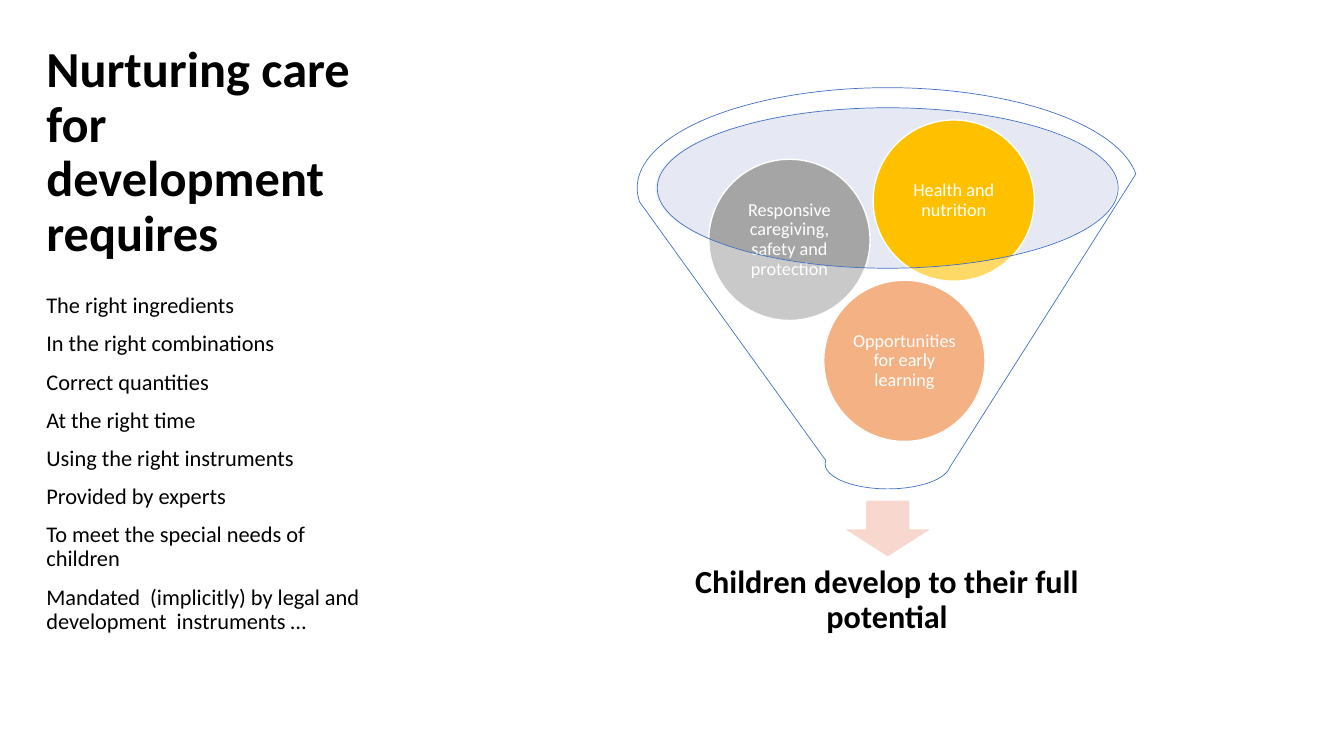
import pptx
import pptx.dml.color
import pptx.enum.shapes
import pptx.enum.text
import pptx.oxml
import pptx.oxml.ns
import pptx.util
from dataclasses import dataclass

Inches = pptx.util.Inches
Pt = pptx.util.Pt
SHAPE = pptx.enum.shapes.MSO_SHAPE
ALIGN = pptx.enum.text.PP_ALIGN
ANCHOR = pptx.enum.text.MSO_ANCHOR


@dataclass(frozen=True)
class Theme:
    font: str = "Calibri"
    title_size: int = 36
    outcome_size: int = 23
    body_size: int = 16
    ingredient_size: int = 13
    text: str = "000000"
    light: str = "FFFFFF"
    funnel_line: str = "4472C4"
    funnel_mouth: str = "C1C9E4"
    arrow: str = "F8D7CE"
    learning: str = "ED7D31"
    caregiving: str = "A5A5A5"
    health: str = "FFC000"


def rgb(value):
    return pptx.dml.color.RGBColor.from_string(value)


def write_text(frame, paragraphs, *, font, size, color, bold=False, align=ALIGN.LEFT,
               anchor=ANCHOR.TOP, inset=None, space_before=0):
    frame.word_wrap = True
    frame.auto_size = pptx.enum.text.MSO_AUTO_SIZE.NONE
    frame.vertical_anchor = anchor
    if inset is not None:
        frame.margin_left = frame.margin_right = Inches(inset)
        frame.margin_top = frame.margin_bottom = Inches(inset)
    frame.text = "\n".join(paragraphs)
    for paragraph in frame.paragraphs:
        paragraph.alignment = align
        paragraph.line_spacing = 0.9
        paragraph.space_before = Pt(space_before)
        paragraph.font.name = font
        paragraph.font.size = Pt(size)
        paragraph.font.bold = bold
        paragraph.font.color.rgb = rgb(color)


class SlideBuilder:
    def __init__(self, presentation, theme):
        self.theme = theme
        self.slide = presentation.slides.add_slide(presentation.slide_layouts[1])

    def place(self, placeholder, box):
        placeholder.left, placeholder.top, placeholder.width, placeholder.height = map(Inches, box)
        return placeholder.text_frame

    def title(self, words, box):
        frame = self.place(self.slide.shapes.title, box)
        write_text(frame, [words], font=self.theme.font, size=self.theme.title_size,
                   color=self.theme.text, bold=True, anchor=ANCHOR.BOTTOM)

    def body(self, items, box):
        frame = self.place(self.slide.placeholders[1], box)
        write_text(frame, items, font=self.theme.font, size=self.theme.body_size,
                   color=self.theme.text, space_before=10)
        for paragraph in frame.paragraphs:
            properties = paragraph._p.get_or_add_pPr()
            properties.set("marL", "0")
            properties.set("indent", "0")
            properties.insert_element_before(
                pptx.oxml.parse_xml(f'<a:buNone {pptx.oxml.ns.nsdecls("a")}/>'),
                "a:tabLst", "a:defRPr", "a:extLst")

    def shape(self, kind, box, fill, line=None, line_width=1, opacity=100):
        shape = self.slide.shapes.add_shape(kind, *map(Inches, box))
        shape.shadow.inherit = False
        shape.fill.solid()
        shape.fill.fore_color.rgb = rgb(fill)
        if opacity < 100:
            color = shape.fill._xPr.find(".//" + pptx.oxml.ns.qn("a:srgbClr"))
            color.append(pptx.oxml.parse_xml(
                f'<a:alpha {pptx.oxml.ns.nsdecls("a")} val="{opacity * 1000}"/>'))
        if line:
            shape.line.color.rgb = rgb(line)
            shape.line.width = Pt(line_width)
        else:
            shape.line.fill.background()
        return shape

    def ingredient(self, words, left, top, fill):
        circle = self.shape(SHAPE.OVAL, (left, top, 1.6, 1.6), fill, self.theme.light)
        write_text(circle.text_frame, [words], font=self.theme.font,
                   size=self.theme.ingredient_size, color=self.theme.light,
                   align=ALIGN.CENTER, anchor=ANCHOR.MIDDLE, inset=0.02)

    def outcome(self, words, box):
        frame = self.slide.shapes.add_textbox(*map(Inches, box)).text_frame
        write_text(frame, [words], font=self.theme.font, size=self.theme.outcome_size,
                   color=self.theme.text, bold=True, align=ALIGN.CENTER,
                   anchor=ANCHOR.MIDDLE, inset=0.18)


def main():
    theme = Theme()
    presentation = pptx.Presentation()
    presentation.slide_width = Inches(13.33)
    presentation.slide_height = Inches(7.5)
    builder = SlideBuilder(presentation, theme)

    builder.title("Nurturing care for development requires", (0.36, 0.53, 3.52, 2.12))
    builder.body([
        "The right ingredients",
        "In the right combinations",
        "Correct quantities",
        "At the right time",
        "Using the right instruments",
        "Provided by experts",
        "To meet the special needs of children",
        "Mandated  (implicitly) by legal and development  instruments …",
    ], (0.36, 2.87, 3.52, 4.37))

    builder.shape(SHAPE.OVAL, (6.5, 1.07, 4.58, 1.59), theme.funnel_mouth, opacity=40)
    builder.shape(SHAPE.DOWN_ARROW, (8.36, 4.96, 0.89, 0.57), theme.arrow, theme.light)
    builder.outcome("Children develop to their full potential", (6.67, 5.42, 4.26, 1.07))

    ingredients = [
        ("Opportunities for early learning", 8.17, 2.78, theme.learning),
        ("Responsive caregiving, safety and protection", 7.03, 1.58, theme.caregiving),
        ("Health and nutrition", 8.66, 1.19, theme.health),
    ]
    for words, left, top, fill in ingredients:
        builder.ingredient(words, left, top, fill)

    builder.shape(SHAPE.FUNNEL, (6.32, 0.87, 4.97, 3.98), theme.light,
                  theme.funnel_line, line_width=0.5, opacity=40)
    presentation.save("out.pptx")


if __name__ == "__main__":
    main()
